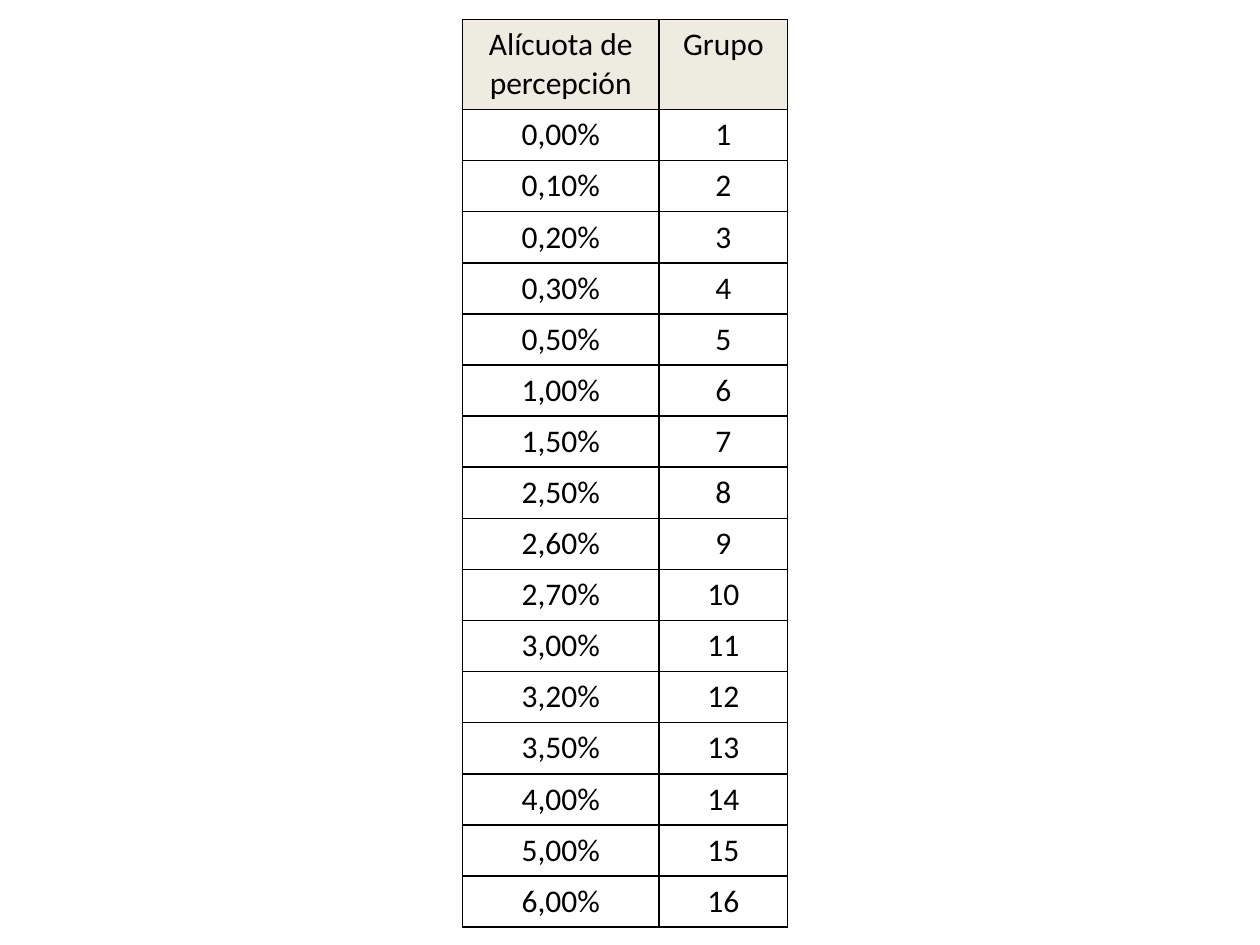
from lxml.etree import SubElement
from pptx import Presentation
from pptx.dml.color import RGBColor
from pptx.enum.text import PP_ALIGN
from pptx.oxml.ns import qn
from pptx.util import Pt

COLORS = {"text": "000000", "border": "000000", "header": "EEECE1"}
HEADERS = ("Alícuota de percepción", "Grupo")
RATES = (
    "0,00%", "0,10%", "0,20%", "0,30%", "0,50%", "1,00%", "1,50%", "2,50%",
    "2,60%", "2,70%", "3,00%", "3,20%", "3,50%", "4,00%", "5,00%", "6,00%",
)


class SlideBuilder:
    font = "Calibri"
    size = 18
    border_width = 1

    def __init__(self, slide):
        self.slide = slide

    def table(self, left, top, widths, heights, rows):
        frame = self.slide.shapes.add_table(
            len(rows), len(widths), Pt(left), Pt(top),
            Pt(sum(widths)), Pt(sum(heights)))
        table = frame.table
        table.horz_banding = False
        for column, width in zip(table.columns, widths):
            column.width = Pt(width)
        for i, (row, height, texts) in enumerate(zip(table.rows, heights, rows)):
            row.height = Pt(height)
            for cell, text in zip(row.cells, texts):
                self.cell(cell, text, COLORS["header"] if i == 0 else None)

    def cell(self, cell, text, fill):
        cell.text_frame.text = text
        p = cell.text_frame.paragraphs[0]
        p.alignment = PP_ALIGN.CENTER
        font = p.runs[0].font
        font.name = self.font
        font.size = Pt(self.size)
        font.bold = False
        font.color.rgb = RGBColor.from_string(COLORS["text"])
        self.borders(cell)
        if fill:
            cell.fill.solid()
            cell.fill.fore_color.rgb = RGBColor.from_string(fill)
        else:
            cell.fill.background()

    def borders(self, cell):
        tc_pr = cell._tc.get_or_add_tcPr()
        for side in ("a:lnL", "a:lnR", "a:lnT", "a:lnB"):
            ln = SubElement(tc_pr, qn(side), w=str(Pt(self.border_width)))
            solid = SubElement(ln, qn("a:solidFill"))
            SubElement(solid, qn("a:srgbClr"), val=COLORS["border"])


def main():
    prs = Presentation()
    prs.slide_width, prs.slide_height = Pt(720), Pt(540)
    s = SlideBuilder(prs.slides.add_slide(prs.slide_layouts[6]))
    groups = [(rate, str(n)) for n, rate in enumerate(RATES, 1)]
    s.table(264.2, 11.2, (112.5, 73.4), [51.4] + [29.2] * len(RATES),
            [HEADERS] + groups)
    prs.save("out.pptx")


if __name__ == "__main__":
    main()
